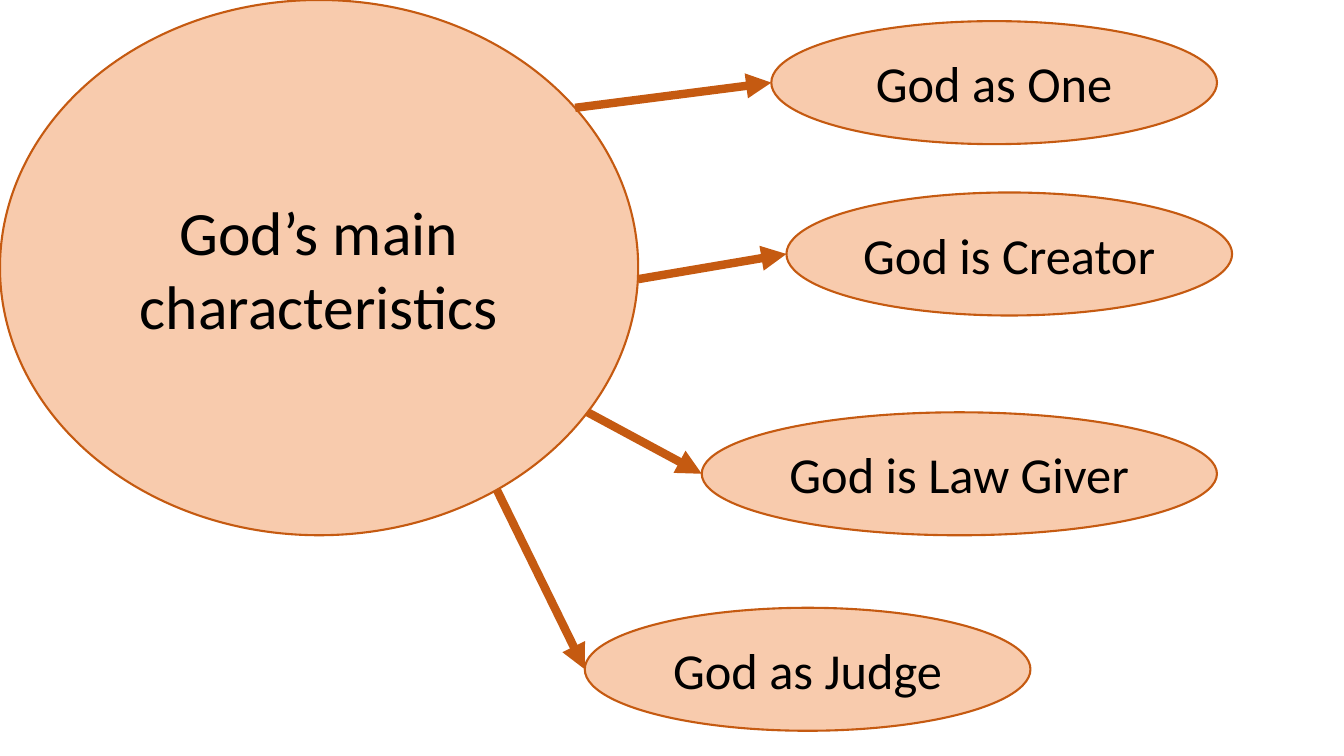
import math

import pptx
import pptx.dml.color
import pptx.enum.shapes
import pptx.enum.text
import pptx.oxml
import pptx.oxml.ns
import pptx.util
from pptx.util import Inches

PEACH = pptx.dml.color.RGBColor(0xF8, 0xCB, 0xAD)
RUST = pptx.dml.color.RGBColor(0xC5, 0x5A, 0x11)
BLACK = pptx.dml.color.RGBColor(0, 0, 0)

TOPIC_BOX = (0, 0, 6.33, 5.31)
BRANCH_HEIGHT = 1.22
BRANCHES = [
    ("God as One", (7.65, 0.21, 4.42, BRANCH_HEIGHT), 1.07),
    ("God is Creator", (7.8, 1.91, 4.42, BRANCH_HEIGHT), 2.77),
    ("God is Law Giver", (6.96, 4.09, 5.11, BRANCH_HEIGHT), 4.09),
    ("God as Judge", (5.8, 6.03, 4.42, BRANCH_HEIGHT), 4.86),
]


def write_text(shape, text, size=36, color=BLACK, font="Calibri"):
    frame = shape.text_frame
    frame.word_wrap = True
    frame.vertical_anchor = pptx.enum.text.MSO_ANCHOR.MIDDLE
    paragraph = frame.paragraphs[0]
    paragraph.alignment = pptx.enum.text.PP_ALIGN.CENTER
    run = paragraph.add_run()
    run.text = text
    run.font.name = font
    run.font.size = pptx.util.Pt(size)
    run.font.color.rgb = color


def add_oval(slide, box, text, **text_format):
    shape = slide.shapes.add_shape(
        pptx.enum.shapes.MSO_SHAPE.OVAL, *map(Inches, box)
    )
    shape.shadow.inherit = False
    shape.fill.solid()
    shape.fill.fore_color.rgb = PEACH
    shape.line.color.rgb = RUST
    shape.line.width = pptx.util.Pt(1.5)
    write_text(shape, text, **text_format)


def add_arrow(slide, start, end):
    connector = slide.shapes.add_connector(
        pptx.enum.shapes.MSO_CONNECTOR.STRAIGHT, *map(Inches, start + end)
    )
    connector.line.color.rgb = RUST
    connector.line.width = pptx.util.Pt(6)
    arrowhead = pptx.oxml.parse_xml(
        f'<a:tailEnd {pptx.oxml.ns.nsdecls("a")} type="triangle"/>'
    )
    connector.line._get_or_add_ln().append(arrowhead)
    no_effects = pptx.oxml.parse_xml(
        f'<a:effectLst {pptx.oxml.ns.nsdecls("a")}/>'
    )
    connector._element.spPr.append(no_effects)


def right_edge_point(box, y):
    left, top, width, height = box
    rise = (y - top - height / 2) / (height / 2)
    return (left + width / 2 * (1 + math.sqrt(1 - rise ** 2)), y)


def add_branch(slide, box, text, arrow_start_y):
    left, top, width, height = box
    add_oval(slide, box, text)
    arrow_start = right_edge_point(TOPIC_BOX, arrow_start_y)
    add_arrow(slide, arrow_start, (left, top + height / 2))


def main():
    presentation = pptx.Presentation()
    presentation.slide_width = Inches(13.33)
    presentation.slide_height = Inches(7.5)
    slide = presentation.slides.add_slide(presentation.slide_layouts[6])
    add_oval(slide, TOPIC_BOX, "God’s main characteristics", size=44)
    for text, box, arrow_start_y in BRANCHES:
        add_branch(slide, box, text, arrow_start_y)
    presentation.save("out.pptx")


if __name__ == "__main__":
    main()
